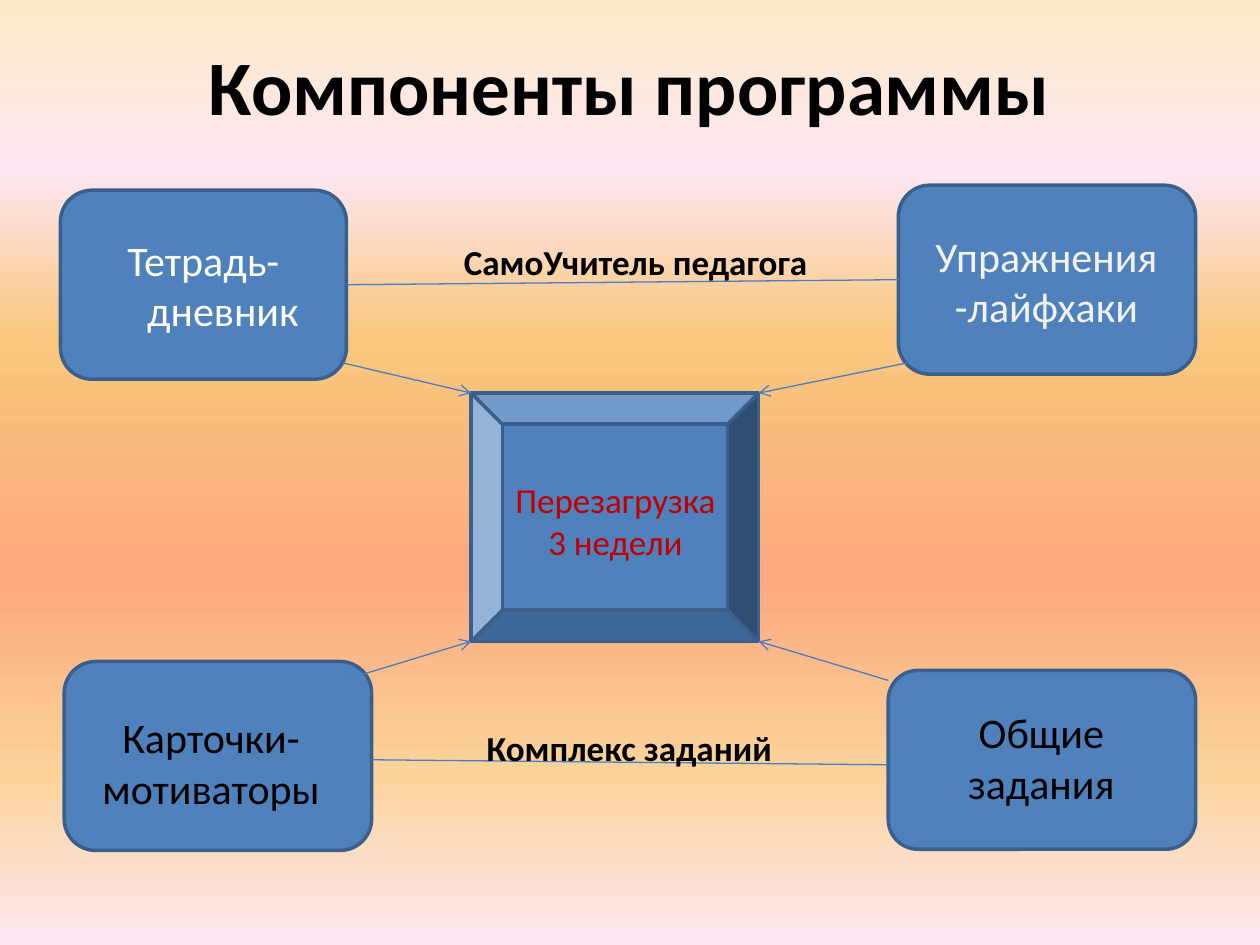
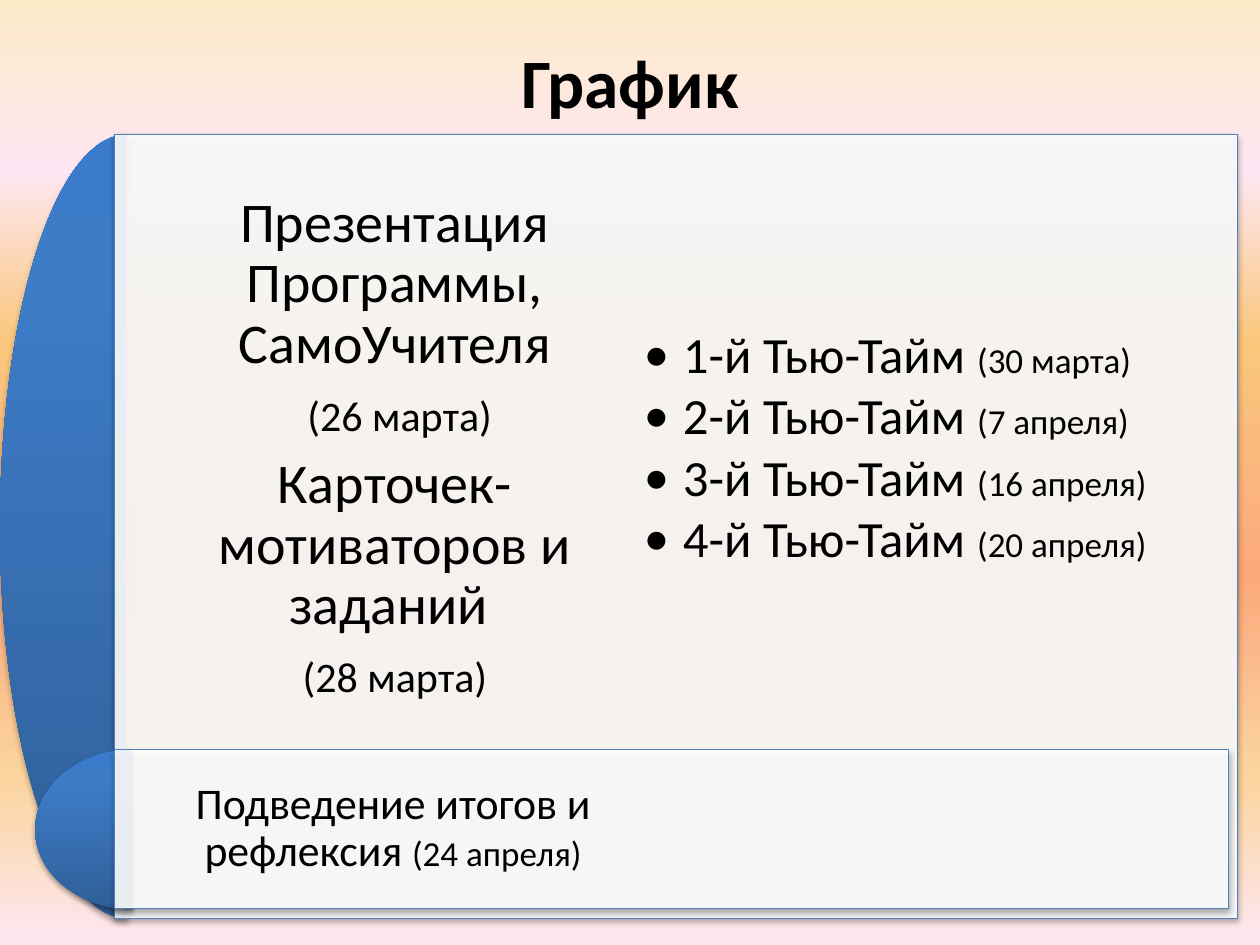
from dataclasses import dataclass

from lxml import etree
from pptx import Presentation
from pptx.dml.color import RGBColor
from pptx.enum.shapes import MSO_CONNECTOR, MSO_SHAPE
from pptx.enum.text import MSO_ANCHOR, MSO_AUTO_SIZE, PP_ALIGN
from pptx.oxml.ns import qn
from pptx.util import Inches, Pt

STRAIGHT = MSO_CONNECTOR.STRAIGHT
ROUNDED, BEVEL = MSO_SHAPE.ROUNDED_RECTANGLE, MSO_SHAPE.BEVEL
RECTANGLE, PIE = MSO_SHAPE.RECTANGLE, MSO_SHAPE.PIE
TOP, MIDDLE = MSO_ANCHOR.TOP, MSO_ANCHOR.MIDDLE
LEFT, CENTER = PP_ALIGN.LEFT, PP_ALIGN.CENTER
NO_AUTOFIT = MSO_AUTO_SIZE.NONE
LEFT_SIDE, RIGHT_SIDE = 1, 3

FONT = "Calibri"
BLACK = RGBColor(0x00, 0x00, 0x00)
WHITE = RGBColor(0xFF, 0xFF, 0xFF)
PALE = RGBColor(0xF2, 0xF2, 0xF2)
RED = RGBColor(0xC0, 0x00, 0x00)
BLUE = RGBColor(0x4F, 0x81, 0xBD)
BORDER_BLUE = RGBColor(0x3A, 0x5F, 0x8C)
LINE_BLUE = RGBColor(0x4B, 0x7E, 0xBC)
CREAM = RGBColor(0xFB, 0xEA, 0xC7)
PINK = RGBColor(0xFE, 0xE7, 0xF2)
AMBER = RGBColor(0xFA, 0xC7, 0x7D)
CORAL = RGBColor(0xFB, 0xA9, 0x7D)
SAND = RGBColor(0xFB, 0xD4, 0x9C)
PIE_DARK = RGBColor(0x2F, 0x5F, 0x99)
PIE_MIDDLE = RGBColor(0x3D, 0x7C, 0xC7)
PIE_LIGHT = RGBColor(0x3A, 0x7C, 0xCB)

SUNSET = [(0, CREAM), (18, PINK), (36, AMBER), (61, CORAL), (82, SAND), (100, PINK)]
PIE_SHADES = [(0, PIE_DARK), (80, PIE_MIDDLE), (100, PIE_LIGHT)]
HANGING = 0.31


@dataclass(frozen=True)
class Area:
    left: float
    top: float
    width: float
    height: float

    def lengths(self):
        return [Inches(n) for n in (self.left, self.top, self.width, self.height)]


@dataclass(frozen=True)
class Span:
    text: str
    size: float


@dataclass(frozen=True)
class Component:
    text: str
    box: Area
    caption: Area
    color: RGBColor


@dataclass(frozen=True)
class Band:
    pie: Area
    panel: Area


NOTEBOOK_BOX = Area(0.48, 1.51, 2.27, 1.5)
CENTER_BOX = Area(3.74, 3.12, 2.28, 1.97)
COMPONENTS = [
    Component("Карточки-мотиваторы", Area(0.51, 5.25, 2.44, 1.5),
              Area(0.59, 5.6, 2.17, 0.91), BLACK),
    Component("Упражнения-лайфхаки", Area(7.13, 1.47, 2.36, 1.5),
              Area(7.28, 1.78, 2.05, 0.91), PALE),
    Component("Общие задания", Area(7.05, 5.32, 2.44, 1.42),
              Area(7.28, 5.56, 1.97, 0.91), BLACK),
]
BANDS = [
    Band(Area(0, 1.07, 2.01, 6.22), Area(0.91, 1.07, 8.91, 6.22)),
    Band(Area(0.28, 5.95, 1.56, 1.27), Area(0.91, 5.95, 8.84, 1.26)),
]
PRESENTATION_STEPS = [
    [Span("Презентация Программы, СамоУчителя", 32)],
    [Span(" (26 марта)", 24)],
    [Span("Карточек-мотиваторов и заданий ", 32)],
    [Span("(28 марта)", 24)],
]
SUMMARY = [[Span("Подведение итогов и рефлексия ", 25), Span("(24 апреля)", 20)]]
MEETING_DATES = ["30 марта", "7 апреля", "16 апреля", "20 апреля"]


def set_gradient(fill, owner, stops: list, angle: float) -> None:
    """Fill with any number of colour stops; angle is counter-clockwise."""
    fill.gradient()
    fill.gradient_angle = angle
    stop_list = next(owner.iter(qn("a:gsLst")))
    for stop in list(stop_list):
        stop_list.remove(stop)
    for percent, color in stops:
        stop = etree.SubElement(stop_list, qn("a:gs"), pos=str(percent * 1000))
        etree.SubElement(stop, qn("a:srgbClr"), val=str(color))


def add_alpha(color_element, percent: int) -> None:
    etree.SubElement(color_element, qn("a:alpha"), val=str(percent * 1000))


def add_soft_shadow(shape) -> None:
    effects = shape._element.spPr.find(qn("a:effectLst"))
    shadow = etree.SubElement(
        effects, qn("a:outerShdw"), blurRad=str(Pt(3.1)), dist=str(Pt(1.8)),
        dir="5400000", rotWithShape="0")
    add_alpha(etree.SubElement(shadow, qn("a:srgbClr"), val=str(BLACK)), 35)


def write(frame, paragraphs: list, *, color: RGBColor = BLACK, bold: bool = False,
          align=CENTER, anchor=TOP, inset: float | None = None, line_spacing=None,
          after_ratio: float = 0, hanging: float = 0, bullet: str = "") -> None:
    """Write paragraphs of spans; after_ratio is spacing relative to text size."""
    frame.word_wrap = True
    frame.auto_size = NO_AUTOFIT
    frame.vertical_anchor = anchor
    if inset is not None:
        frame.margin_left = frame.margin_right = Inches(inset)
        frame.margin_top = frame.margin_bottom = Inches(inset)
    for index, spans in enumerate(paragraphs):
        para = frame.add_paragraph() if index else frame.paragraphs[0]
        para.alignment = align
        if line_spacing:
            para.line_spacing = line_spacing
        if after_ratio:
            para.space_after = Pt(spans[0].size * after_ratio)
        properties = para._p.get_or_add_pPr()
        if hanging:
            properties.set("marL", str(Inches(hanging)))
            properties.set("indent", str(-Inches(hanging)))
        if bullet:
            etree.SubElement(properties, qn("a:buFont"), typeface=FONT)
            etree.SubElement(properties, qn("a:buChar"), char=bullet)
        for span in spans:
            run = para.add_run()
            run.text = span.text
            run.font.name = FONT
            run.font.size = Pt(span.size)
            run.font.bold = bold
            run.font.color.rgb = color


def add_text(slide, area: Area, paragraphs: list, **style) -> None:
    write(slide.shapes.add_textbox(*area.lengths()).text_frame, paragraphs, **style)


def add_titled_slide(deck, text: str, area: Area, size: float):
    slide = deck.slides.add_slide(deck.slide_layouts[5])
    title = slide.shapes.title
    title.left, title.top, title.width, title.height = area.lengths()
    write(title.text_frame, [[Span(text, size)]], bold=True, anchor=MIDDLE)
    return slide


def add_blue_box(slide, kind, area: Area):
    box = slide.shapes.add_shape(kind, *area.lengths())
    box.fill.solid()
    box.fill.fore_color.rgb = BLUE
    box.line.color.rgb = BORDER_BLUE
    box.line.width = Pt(2)
    box.shadow.inherit = False
    return box


def add_line(slide, start: tuple, end: tuple, arrow: bool = False):
    points = [Inches(n) for n in (*start, *end)]
    line = slide.shapes.add_connector(STRAIGHT, *points)
    line.line.color.rgb = LINE_BLUE
    line.line.width = Pt(0.75)
    if arrow:
        etree.SubElement(line.line._get_or_add_ln(), qn("a:tailEnd"), type="arrow")
    etree.SubElement(line._element.spPr, qn("a:effectLst"))
    return line


def add_band(slide, band: Band) -> None:
    """Draw a half disc with a translucent panel to its right."""
    pie = slide.shapes.add_shape(PIE, *band.pie.lengths())
    pie.adjustments[0], pie.adjustments[1] = 54, 162
    set_gradient(pie.fill, pie._element.spPr, PIE_SHADES, 90)
    pie.line.fill.background()
    panel = slide.shapes.add_shape(RECTANGLE, *band.panel.lengths())
    panel.fill.solid()
    panel.fill.fore_color.rgb = WHITE
    add_alpha(next(panel._element.spPr.iter(qn("a:srgbClr"))), 90)
    panel.line.color.rgb = BLUE
    panel.line.width = Pt(0.75)
    for shape in (pie, panel):
        shape.shadow.inherit = False
        add_soft_shadow(shape)


def build_components(deck) -> None:
    slide = add_titled_slide(deck, "Компоненты программы", Area(0.5, 0.05, 9, 1.25), 44)
    add_blue_box(slide, BEVEL, CENTER_BOX)
    notebook = add_blue_box(slide, ROUNDED, NOTEBOOK_BOX)
    write(notebook.text_frame, [[Span("Тетрадь-дневник", 24)]],
          color=WHITE, anchor=MIDDLE, hanging=HANGING)
    boxes = []
    for component in COMPONENTS:
        boxes.append(add_blue_box(slide, ROUNDED, component.box))
        add_text(slide, component.caption, [[Span(component.text, 24)]],
                 color=component.color)
    exercises = boxes[1]
    add_text(slide, Area(3.98, 3.75, 1.81, 0.77),
             [[Span("Перезагрузка 3 недели", 20)]], color=RED)

    left, top = CENTER_BOX.left, CENTER_BOX.top
    right, bottom = left + CENTER_BOX.width, top + CENTER_BOX.height
    for start, corner in [((7.2, 2.88), (right, top)), ((7.05, 5.4), (right, bottom)),
                          ((2.72, 2.88), (left, top)), ((2.72, 5.4), (left, bottom))]:
        add_line(slide, start, corner, arrow=True)

    add_line(slide, (2.95, 6.03), (7.05, 6.07))
    add_text(slide, Area(3.58, 5.72, 2.83, 0.44),
             [[Span("Комплекс заданий", 20)]], bold=True)
    upper_line = add_line(slide, (2.75, 2.26), (7.13, 2.22))
    upper_line.begin_connect(notebook, RIGHT_SIDE)
    upper_line.end_connect(exercises, LEFT_SIDE)
    add_text(slide, Area(3.43, 1.86, 3.23, 0.44),
             [[Span("СамоУчитель педагога", 20)]], bold=True)


def build_schedule(deck) -> None:
    slide = add_titled_slide(deck, "График", Area(0.5, 0.3, 9, 0.69), 39.6)
    for band in BANDS:
        add_band(slide, band)
    add_text(slide, Area(0.91, 1.41, 4.45, 4.4), PRESENTATION_STEPS,
             inset=0.13, line_spacing=0.9, after_ratio=0.35)
    add_text(slide, Area(0.91, 5.95, 4.42, 1.26), SUMMARY,
             anchor=MIDDLE, inset=0.1, line_spacing=0.9, after_ratio=0.35)
    meetings = [[Span(f"{number}-й Тью-Тайм ", 29), Span(f"({date})", 20)]
                for number, date in enumerate(MEETING_DATES, 1)]
    add_text(slide, Area(4.84, 2.1, 4.82, 2.93), meetings, align=LEFT, anchor=MIDDLE,
             inset=0.27, line_spacing=0.9, after_ratio=0.13, hanging=HANGING, bullet="•")


def main() -> None:
    deck = Presentation()
    deck.slide_width, deck.slide_height = Inches(10), Inches(7.5)
    master = deck.slide_master
    set_gradient(master.background.fill, master.element, SUNSET, 270)
    build_components(deck)
    build_schedule(deck)
    deck.save("out.pptx")


if __name__ == "__main__":
    main()
